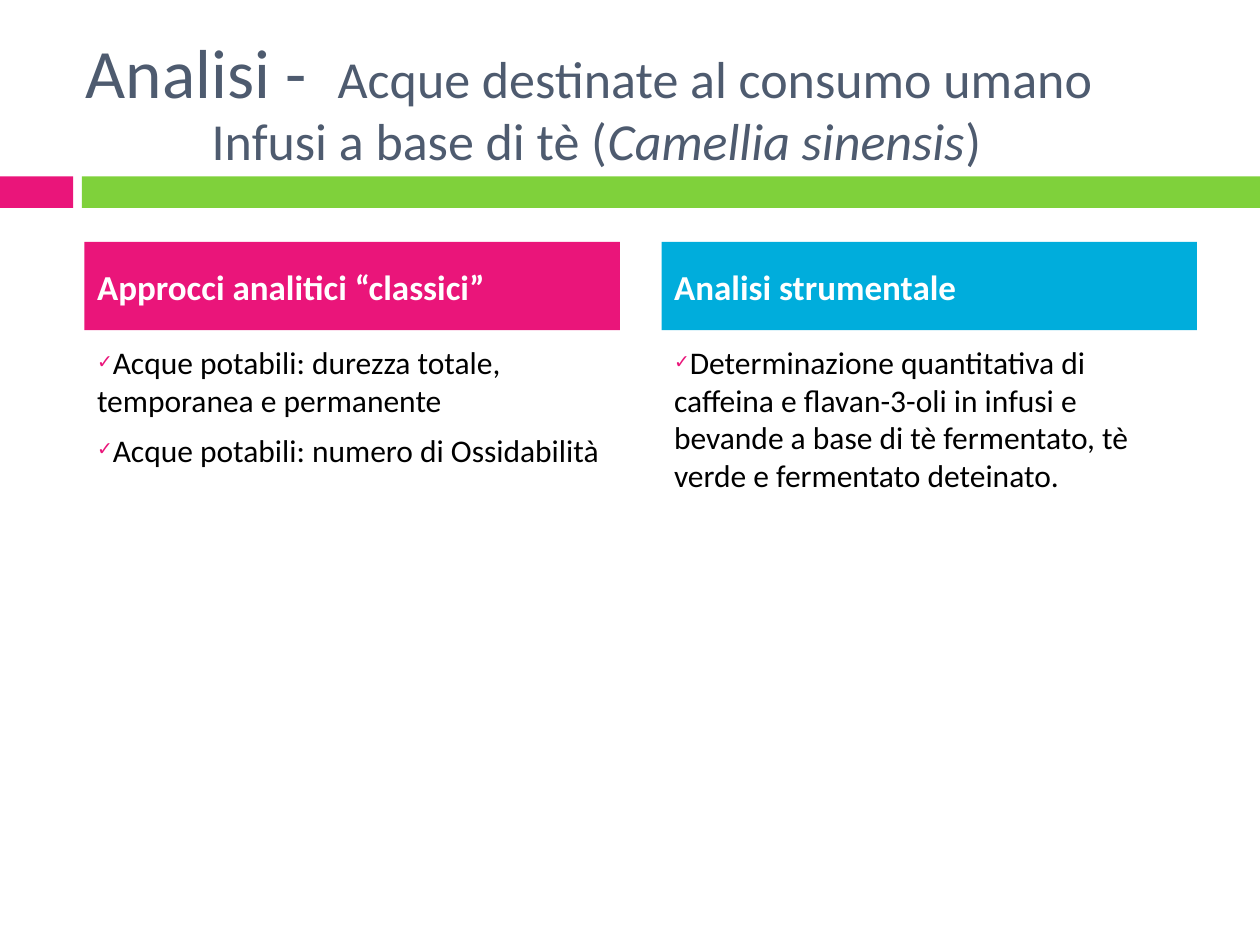
from dataclasses import dataclass

from lxml import etree
from pptx import Presentation
from pptx.dml.color import RGBColor
from pptx.enum import shapes, text
from pptx.oxml import ns
from pptx.util import Inches, Pt


@dataclass(frozen=True)
class Theme:
    font: str = "Calibri"
    slate: str = "4E5B6F"
    pink: str = "EA157A"
    green: str = "7FD13B"
    blue: str = "00ADDC"
    white: str = "FFFFFF"
    black: str = "000000"
    title: float = 39.6
    subtitle: float = 29.7
    heading: float = 20
    body: float = 18


theme = Theme()


def add_run(paragraph, content, size, color, bold=False, italic=False):
    run = paragraph.add_run()
    run.text = content
    run.font.name = theme.font
    run.font.size = Pt(size)
    run.font.color.rgb = RGBColor.from_string(color)
    run.font.bold = bold
    run.font.italic = italic


def place(shape, left, top, width, height, anchor):
    """Position a placeholder and fix its text frame."""
    shape.left, shape.top = Inches(left), Inches(top)
    shape.width, shape.height = Inches(width), Inches(height)
    frame = shape.text_frame
    frame.word_wrap = True
    frame.auto_size = text.MSO_AUTO_SIZE.NONE
    frame.vertical_anchor = anchor
    return frame


presentation = Presentation()
presentation.slide_width, presentation.slide_height = Inches(10), Inches(7.5)
slide = presentation.slides.add_slide(presentation.slide_layouts.get_by_name("Comparison"))

# Band under the title
for left, width, color in ((0, 0.58, theme.pink), (0.65, 9.35, theme.green)):
    band = slide.shapes.add_shape(
        shapes.MSO_SHAPE.RECTANGLE, Inches(left), Inches(1.4), Inches(width), Inches(0.25))
    band.shadow.inherit = False
    band.fill.solid()
    band.fill.fore_color.rgb = RGBColor.from_string(color)
    band.line.fill.background()

# Title on two lines, aligned by tabs
frame = place(slide.shapes.title, 0.58, 0.3, 8.92, 0.95, text.MSO_ANCHOR.MIDDLE)
frame.margin_top, frame.margin_bottom = Inches(0.1), Inches(0)
paragraph = frame.paragraphs[0]
paragraph.alignment = text.PP_ALIGN.LEFT
paragraph.line_spacing = 0.93
add_run(paragraph, "Analisi - \t", theme.title, theme.slate)
add_run(paragraph, "Acque destinate al consumo umano", theme.subtitle, theme.slate)
paragraph.add_line_break()
add_run(paragraph, "\t\tInfusi a base di tè (", theme.subtitle, theme.slate)
add_run(paragraph, "Camellia sinensis", theme.subtitle, theme.slate, italic=True)
add_run(paragraph, ")", theme.subtitle, theme.slate)

# Two columns: coloured heading above a checked list
columns = (
    ("Approcci analitici “classici”", theme.pink, (
        "Acque potabili: durezza totale, temporanea e permanente",
        "Acque potabili: numero di Ossidabilità")),
    ("Analisi strumentale", theme.blue, (
        "Determinazione quantitativa di caffeina e flavan-3-oli in infusi e bevande "
        "a base di tè fermentato, tè verde e fermentato deteinato.",)),
)
placeholders = {shape.placeholder_format.idx: shape for shape in slide.placeholders}
for column, (heading, color, items) in enumerate(columns):
    left = 0.67 + column * 4.58
    header = placeholders[1 + 2 * column]
    header.fill.solid()
    header.fill.fore_color.rgb = RGBColor.from_string(color)
    frame = place(header, left, 1.92, 4.25, 0.7, text.MSO_ANCHOR.MIDDLE)
    paragraph = frame.paragraphs[0]
    paragraph.space_before = Pt(7)
    add_run(paragraph, heading, theme.heading, theme.white, bold=True)

    frame = place(placeholders[2 + 2 * column], left, 2.67, 4.25, 3.92, text.MSO_ANCHOR.TOP)
    for index, item in enumerate(items):
        paragraph = frame.add_paragraph() if index else frame.paragraphs[0]
        paragraph.space_before = Pt(7)
        add_run(paragraph, item, theme.body, theme.black)
        properties = paragraph._p.get_or_add_pPr()
        properties.set("marL", "0")
        properties.set("indent", str(Inches(-0.35)))
        bullet_color = etree.SubElement(properties, ns.qn("a:buClr"))
        etree.SubElement(bullet_color, ns.qn("a:srgbClr"), val=theme.pink)
        etree.SubElement(properties, ns.qn("a:buSzPct"), val="60000")
        etree.SubElement(properties, ns.qn("a:buChar"), char="✓")

presentation.save("out.pptx")
